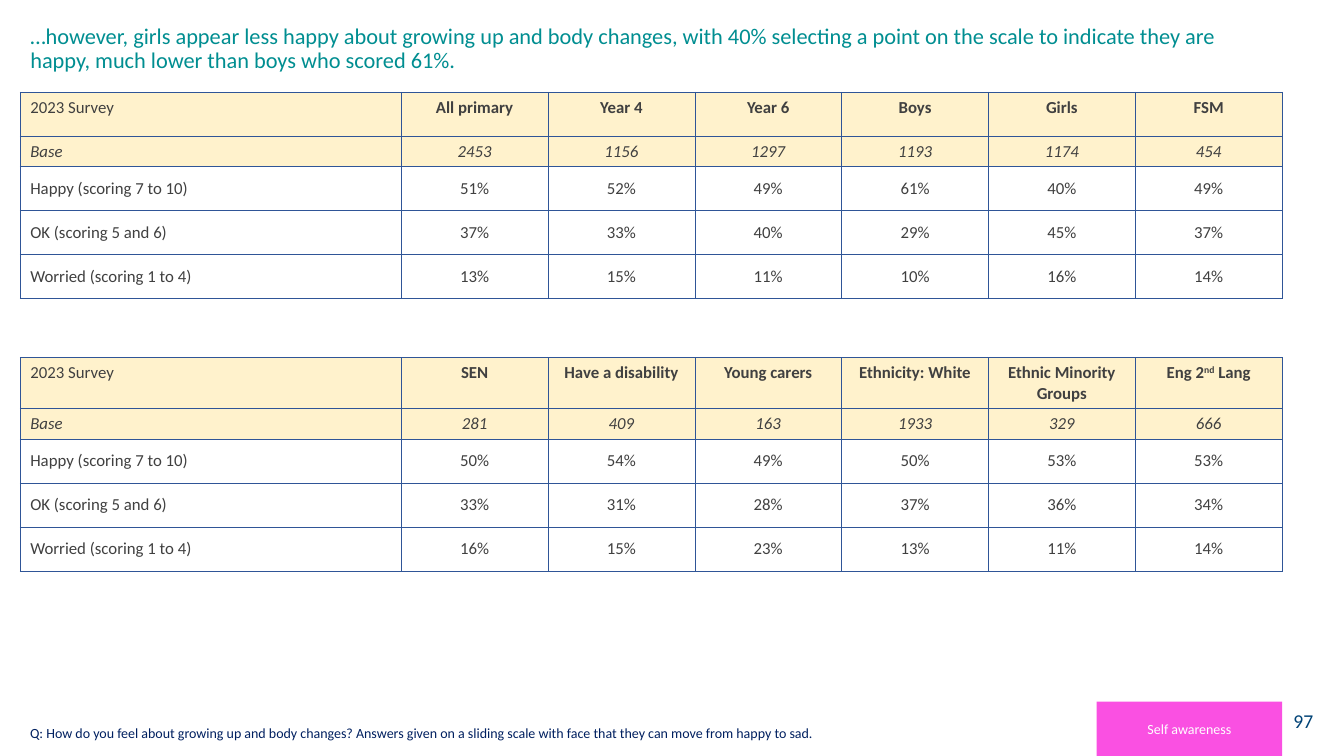
import dataclasses

import lxml.etree
import pptx
import pptx.dml.color
import pptx.enum.shapes
import pptx.enum.text
import pptx.oxml
import pptx.oxml.ns
import pptx.util

Cm = pptx.util.Cm
Pt = pptx.util.Pt
RGBColor = pptx.dml.color.RGBColor
Align = pptx.enum.text.PP_ALIGN
Anchor = pptx.enum.text.MSO_ANCHOR

TEAL = RGBColor(0x00, 0x8E, 0x91)
NAVY = RGBColor(0x00, 0x20, 0x60)
BLUE = RGBColor(0x00, 0x43, 0x76)
GREY = RGBColor(0x40, 0x40, 0x40)
CREAM = RGBColor(0xFF, 0xF2, 0xCC)
PINK = RGBColor(0xFA, 0x50, 0xE2)
WHITE = RGBColor(0xFF, 0xFF, 0xFF)
EDGE = RGBColor(0x2F, 0x55, 0x97)

FONT = "Calibri"
LEFT = 0.51
LABELS = ["2023 Survey", "Base", "Happy (scoring 7 to 10)",
          "OK (scoring 5 and 6)", "Worried (scoring 1 to 4)"]
LABEL_W, DATA_W = 9.6, 3.7
BASE_H, ROW_H = 0.76, 1.11


@dataclasses.dataclass
class Grid:
    top: float
    head_h: float
    heads: list[str]  # text between carets is raised
    bases: list[int]
    shares: list[list[int]]


@dataclasses.dataclass
class Box:
    text: str
    left: float
    top: float
    width: float
    height: float
    fill: RGBColor
    color: RGBColor
    size: int
    align: Align


GRIDS = [
    Grid(2.32, ROW_H,
         ["All primary", "Year 4", "Year 6", "Boys", "Girls", "FSM"],
         [2453, 1156, 1297, 1193, 1174, 454],
         [[51, 52, 49, 61, 40, 49],
          [37, 33, 40, 29, 45, 37],
          [13, 15, 11, 10, 16, 14]]),
    Grid(9.01, 1.29,
         ["SEN", "Have a disability", "Young carers", "Ethnicity: White",
          "Ethnic Minority Groups", "Eng 2^nd^ Lang"],
         [281, 409, 163, 1933, 329, 666],
         [[50, 54, 49, 50, 53, 53],
          [33, 31, 28, 37, 36, 34],
          [16, 15, 23, 13, 11, 14]]),
]

BOXES = [
    Box("97", 31.85, 17.65, 1.5, 1.02, WHITE, BLUE, 14, Align.RIGHT),
    Box("Self awareness", 27.64, 17.68, 4.67, 1.37, PINK, WHITE, 10,
        Align.CENTER),
]


def style(para, size: int, color: RGBColor, bold: bool = False,
          slant: bool = False) -> None:
    for run in para.runs:
        font = run.font
        font.name, font.size = FONT, Pt(size)
        font.bold, font.italic = bold, slant
        font.color.rgb = color


def border(cell) -> None:
    props = cell._tc.get_or_add_tcPr()
    for side in ("lnL", "lnR", "lnT", "lnB"):
        line = lxml.etree.SubElement(props, pptx.oxml.ns.qn(f"a:{side}"),
                                     w=str(Pt(0.5)))
        fill = lxml.etree.SubElement(line, pptx.oxml.ns.qn("a:solidFill"))
        lxml.etree.SubElement(fill, pptx.oxml.ns.qn("a:srgbClr"),
                              val=str(EDGE))


def fill_cell(cell, text: str, row: int, col: int) -> None:
    border(cell)
    if row < 2:
        cell.fill.solid()
        cell.fill.fore_color.rgb = CREAM
    else:
        cell.fill.background()
    cell.vertical_anchor = Anchor.MIDDLE if row else Anchor.TOP
    para = cell.text_frame.paragraphs[0]
    para.alignment = Align.CENTER if col else Align.LEFT
    parts = text.split("^")
    para.text = parts[0]
    for pos, part in enumerate(parts[1:], 1):
        run = para.add_run()
        run.text = part
        if pos % 2:
            run._r.get_or_add_rPr().set("baseline", "30000")
    style(para, 12, GREY, bold=row == 0 and col > 0, slant=row == 1)


def draw_grid(slide, grid: Grid) -> None:
    tall = [grid.head_h, BASE_H] + [ROW_H] * len(grid.shares)
    wide = [LABEL_W] + [DATA_W] * len(grid.heads)
    table = slide.shapes.add_table(
        len(tall), len(wide), Cm(LEFT), Cm(grid.top),
        Cm(sum(wide)), Cm(sum(tall))).table
    table.first_row = table.horz_banding = False
    for item, width in zip(table.columns, wide):
        item.width = Cm(width)
    for item, height in zip(table.rows, tall):
        item.height = Cm(height)
    body = [grid.heads, [str(base) for base in grid.bases]]
    body += [[f"{share}%" for share in line] for line in grid.shares]
    for row, (label, line) in enumerate(zip(LABELS, body)):
        for col, text in enumerate([label] + line):
            fill_cell(table.cell(row, col), text, row, col)


def draw_box(slide, box: Box) -> None:
    shape = slide.shapes.add_shape(
        pptx.enum.shapes.MSO_SHAPE.RECTANGLE, Cm(box.left), Cm(box.top),
        Cm(box.width), Cm(box.height))
    shape.shadow.inherit = False
    shape.fill.solid()
    shape.fill.fore_color.rgb = box.fill
    shape.line.fill.background()
    frame = shape.text_frame
    frame.text = box.text
    frame.vertical_anchor = Anchor.MIDDLE
    para = frame.paragraphs[0]
    para.alignment = box.align
    style(para, box.size, box.color)


def draw_title(slide) -> None:
    title = slide.shapes.title
    title.left, title.top = Cm(LEFT), Cm(0.51)
    title.width, title.height = Cm(31.8), Cm(2.49)
    frame = title.text_frame
    frame.text = ("…however, girls appear less happy about growing up and "
                  "body changes, with 40% selecting a point on the scale to "
                  "indicate they are happy, much lower than boys who "
                  "scored 61%.")
    frame.word_wrap = True
    frame.auto_size = pptx.enum.text.MSO_AUTO_SIZE.NONE
    frame.vertical_anchor = Anchor.TOP
    para = frame.paragraphs[0]
    para.alignment, para.line_spacing = Align.LEFT, 0.9
    style(para, 16, TEAL)


def draw_note(slide) -> None:
    frame = slide.shapes.add_textbox(
        Cm(LEFT), Cm(18.11), Cm(26.21), Cm(0.69)).text_frame
    frame.text = ("Q: How do you feel about growing up and body changes? "
                  "Answers given on a sliding scale with face that they can "
                  "move from happy to sad.")
    frame.word_wrap = True
    frame.vertical_anchor = Anchor.BOTTOM
    style(frame.paragraphs[0], 10, NAVY)


def main() -> None:
    deck = pptx.Presentation()
    deck.slide_width, deck.slide_height = Cm(33.87), Cm(19.05)
    slide = deck.slides.add_slide(deck.slide_layouts[5])

    # Heading and question
    draw_title(slide)
    draw_note(slide)

    # Survey tables
    for grid in GRIDS:
        draw_grid(slide, grid)

    # Page number and section tag
    for box in BOXES:
        draw_box(slide, box)

    deck.save("out.pptx")


if __name__ == "__main__":
    main()
